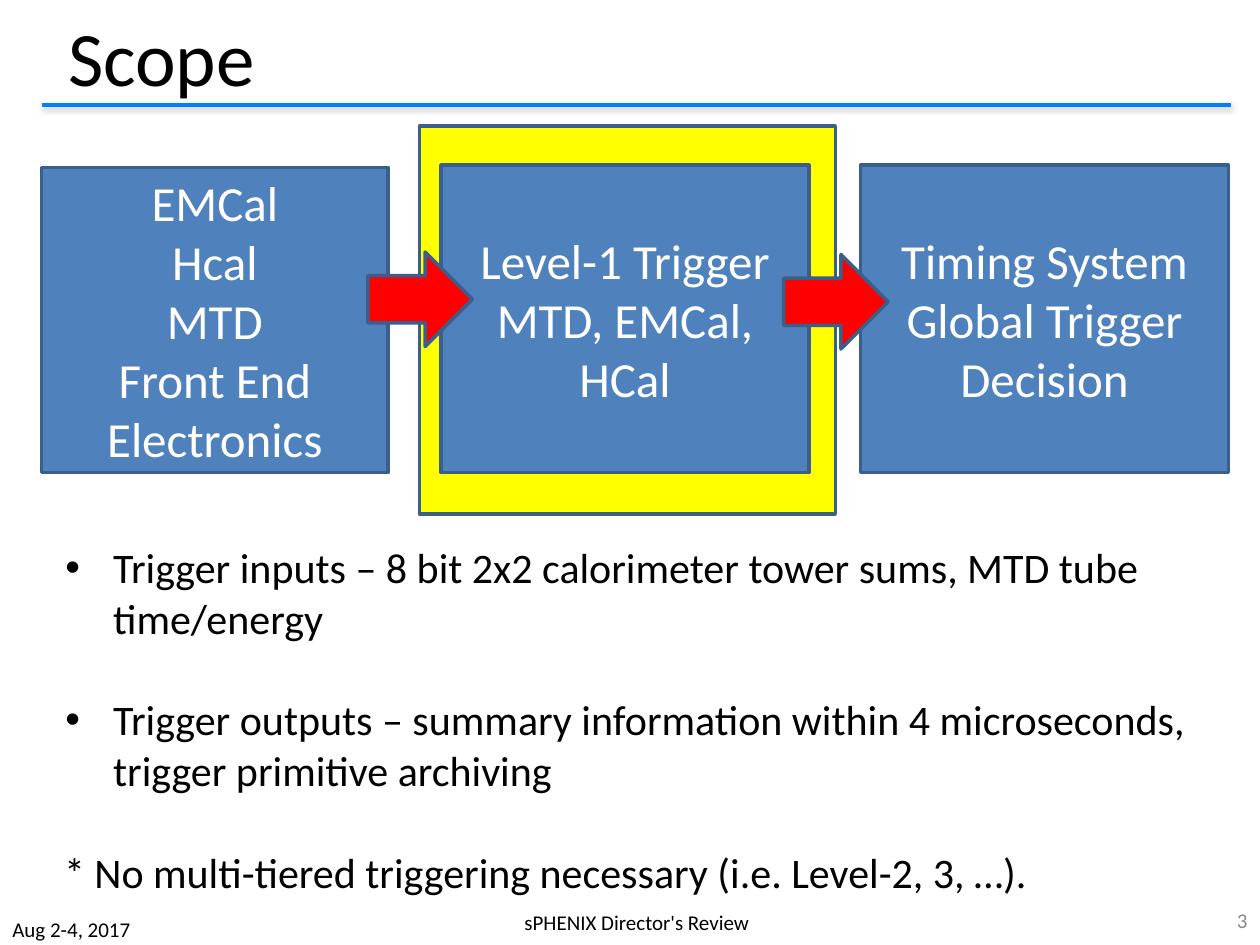
from lxml import etree
from pptx import Presentation
from pptx.dml.color import RGBColor
from pptx.enum.shapes import MSO_CONNECTOR, MSO_SHAPE
from pptx.enum.text import MSO_ANCHOR, PP_ALIGN
from pptx.oxml import parse_xml
from pptx.oxml.ns import nsdecls, qn
from pptx.util import Inches, Pt

RECT, ARROW = MSO_SHAPE.RECTANGLE, MSO_SHAPE.RIGHT_ARROW
LEFT, CENTER, RIGHT = PP_ALIGN.LEFT, PP_ALIGN.CENTER, PP_ALIGN.RIGHT
TOP, MIDDLE = MSO_ANCHOR.TOP, MSO_ANCHOR.MIDDLE
FONT = "Calibri"
COLORS = {
    "text": "000000", "white": "FFFFFF", "number": "898989",
    "rule": "0080FF", "shadow": "808080", "outline": "3A5F8C",
    "block": "4F81BD", "highlight": "FFFF00", "arrow": "FF0000",
}


def rgb(name):
    return RGBColor.from_string(COLORS[name])


def inches(box):
    return [Inches(v) for v in box]


def write(tf, lines, size, color="text", align=LEFT, anchor=TOP, wrap=True):
    tf.word_wrap = wrap
    tf.vertical_anchor = anchor
    tf.text = "\n".join(lines)
    for p in tf.paragraphs:
        p.alignment = align
        for r in p.runs:
            r.font.name = FONT
            r.font.size = Pt(size)
            r.font.color.rgb = rgb(color)


def add_text(s, box, lines, size, **style):
    tf = s.shapes.add_textbox(*inches(box)).text_frame
    write(tf, lines, size, **style)
    return tf


def add_block(s, kind, box, fill, lines=()):
    sp = s.shapes.add_shape(kind, *inches(box))
    sp.shadow.inherit = False
    sp.fill.solid()
    sp.fill.fore_color.rgb = rgb(fill)
    sp.line.color.rgb = rgb("outline")
    sp.line.width = Pt(2)
    if lines:
        write(sp.text_frame, lines, 28, color="white", align=CENTER, anchor=MIDDLE)


def add_rule(s, left, right, y):
    """Draw the line under the title with its soft shadow."""
    line = s.shapes.add_connector(MSO_CONNECTOR.STRAIGHT, *inches((left, y, right, y)))
    line.line.color.rgb = rgb("rule")
    line.line.width = Pt(2.25)
    line._element.spPr.append(parse_xml(
        f'<a:effectLst {nsdecls("a")}>'
        f'<a:outerShdw blurRad="{Pt(3.1)}" dist="{Pt(1.6)}" dir="5400000" rotWithShape="0">'
        f'<a:srgbClr val="{COLORS["shadow"]}"><a:alpha val="38000"/></a:srgbClr>'
        '</a:outerShdw></a:effectLst>'))


def add_title(s, box, title):
    tf = add_text(s, box, [title], 44, anchor=MIDDLE)
    tf.margin_left = tf.margin_right = Inches(0.04)
    tf.margin_top = tf.margin_bottom = Inches(0.04)


def add_flow(s, highlight, blocks, arrows):
    """Draw the trigger chain: highlight, blocks, then the arrows on top."""
    add_block(s, RECT, highlight, "highlight")
    for box, lines in blocks:
        add_block(s, RECT, box, "block", lines)
    for x, y in arrows:
        add_block(s, ARROW, (x, y, 0.83, 0.75), "arrow")


def add_bullets(s, box, lines):
    tf = add_text(s, box, lines, 24)
    for i, p in enumerate(tf.paragraphs):
        pPr = p._p.get_or_add_pPr()
        pPr.set("marL", str(Inches(0.38)))
        pPr.set("indent", str(Inches(-0.38)))
        etree.SubElement(pPr, qn("a:buFont"), typeface="Arial")
        etree.SubElement(pPr, qn("a:buChar"), char="•")
        if i:
            p.space_before = Pt(29.3)


def add_footer(s):
    add_text(s, (0, 7.25, 2.33, 0.25), ["Aug 2-4, 2017"], 12, anchor=MIDDLE)
    add_text(s, (3.47, 7.17, 3.17, 0.3), ["sPHENIX Director's Review"], 12,
             align=CENTER, anchor=MIDDLE)
    add_text(s, (9.42, 7.1, 0.58, 0.4), ["3"], 12, color="number",
             align=RIGHT, anchor=MIDDLE)


def main():
    prs = Presentation()
    prs.slide_width, prs.slide_height = Inches(10), Inches(7.5)
    s = prs.slides.add_slide(prs.slide_layouts[6])

    add_rule(s, 0.33, 9.77, 0.83)
    add_title(s, (0.5, 0.04, 9, 0.8), "Scope")
    add_flow(
        s,
        highlight=(3.33, 1, 3.3, 3.08),
        blocks=[
            ((0.33, 1.33, 2.75, 2.42), ["EMCal", "Hcal", "MTD", "Front End Electronics"]),
            ((3.5, 1.31, 2.92, 2.44), ["Level-1 Trigger", "MTD, EMCal, HCal"]),
            ((6.83, 1.31, 2.92, 2.44), ["Timing System", "Global Trigger Decision"]),
        ],
        arrows=[(2.92, 2), (6.22, 2.02)],
    )
    add_bullets(s, (0.42, 4.25, 9.33, 2.12), [
        "Trigger inputs – 8 bit 2x2 calorimeter tower sums, MTD tube time/energy",
        "Trigger outputs – summary information within 4 microseconds, "
        "trigger primitive archiving",
    ])
    add_text(s, (0.41, 6.67, 7.92, 0.5),
             ["* No multi-tiered triggering necessary (i.e. Level-2, 3, …)."], 24, wrap=False)
    add_footer(s)
    prs.save("out.pptx")


if __name__ == "__main__":
    main()
